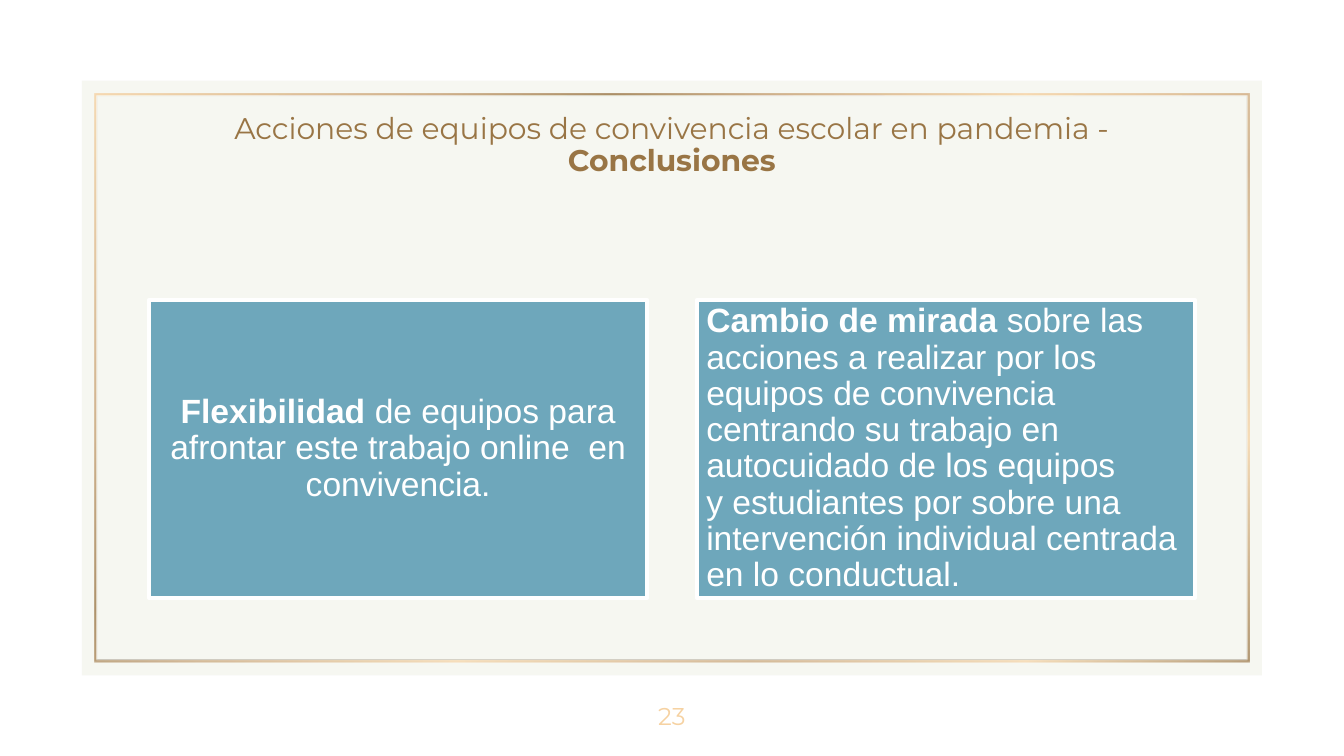
from lxml.etree import SubElement
from pptx import Presentation
from pptx.dml.color import RGBColor
from pptx.enum.shapes import MSO_SHAPE
from pptx.enum.text import MSO_ANCHOR as ANCHOR, PP_ALIGN as ALIGN
from pptx.oxml import parse_xml
from pptx.oxml.ns import nsdecls, qn
from pptx.util import Pt

PX = 4572  # 200 px to the inch
NBSP = chr(160)  # written as ~ in the texts below
COLORS = {"panel": "F5F6F0", "light": "F6D2A2", "mid": "C59F72",
          "dark": "997545", "card": "6EA7BB", "white": "FFFFFF"}
GOLD_STOPS = [(0, "light"), (20, "mid"), (30, "dark"), (39, "mid"),
              (54, "light"), (71, "mid"), (87, "light"), (100, "dark")]
CARDS = [
    (ALIGN.CENTER, "Flexibilidad~",
     "de equipos para afrontar este~trabajo online~ en convivencia."),
    (ALIGN.LEFT, "Cambio de mirada~",
     "sobre las acciones a realizar~por los equipos de convivencia "
     "centrando su~trabajo en autocuidado de los equipos y~estudiantes "
     "por sobre una intervención~individual centrada en lo conductual.~"),
]


def rgb(name):
    return RGBColor.from_string(COLORS[name])


def px(*lengths):
    return [n * PX for n in lengths]


def add_box(shapes, kind, box, fill):
    s = shapes.add_shape(kind, *px(*box))
    s.shadow.inherit = False
    s.fill.solid()
    s.fill.fore_color.rgb = rgb(fill)
    s.line.fill.background()
    return s


def write(s, runs, font, size, color, align, spacing=1.0, inset=0):
    """Fill a shape with one paragraph of (text, bold) runs."""
    tf = s.text_frame
    tf.word_wrap = True
    tf.vertical_anchor = ANCHOR.MIDDLE
    tf.margin_left = tf.margin_top = tf.margin_right = tf.margin_bottom = inset * PX
    p = tf.paragraphs[0]
    p.alignment = align
    p.line_spacing = spacing
    p.font.name, p.font.size = font, Pt(size)
    p.font.color.rgb = rgb(color)
    for text, bold in runs:
        r = p.add_run()
        r.text = text.replace("~", NBSP)
        r.font.bold = bold


def add_panel(slide, box):
    """Pale translucent sheet with a thin gold frame inside it."""
    x, y, w, h = box
    sheet = add_box(slide.shapes, MSO_SHAPE.RECTANGLE, box, "panel")
    color = sheet.fill._xPr.find(qn("a:solidFill"))[0]
    SubElement(color, qn("a:alpha"), val="87000")

    gap = 19
    frame = add_box(slide.shapes, MSO_SHAPE.FRAME,
                    (x + gap, y + gap, w - 2 * gap, h - 2 * gap), "mid")
    frame.adjustments[0] = 0.004
    stops = "".join(
        f'<a:gs pos="{pos * 1000}"><a:srgbClr val="{COLORS[name]}">'
        '<a:alpha val="80000"/></a:srgbClr></a:gs>' for pos, name in GOLD_STOPS)
    sp_pr = frame.fill._xPr
    sp_pr.replace(sp_pr.find(qn("a:solidFill")), parse_xml(
        f'<a:gradFill {nsdecls("a")} rotWithShape="1"><a:gsLst>{stops}</a:gsLst>'
        '<a:lin ang="2700000" scaled="0"/></a:gradFill>'))


def add_title(slide, box):
    title = slide.shapes.title
    slide.shapes._spTree.append(title._element)  # in front of the panel
    title.left, title.top, title.width, title.height = px(*box)
    write(title, [("Acciones de equipos de convivencia escolar en pandemia - ", False),
                  ("Conclusiones", True)],
          "Montserrat", 16, "dark", ALIGN.CENTER, 0.9)


def add_cards(slide, box, gap):
    x, y, w, h = box
    card_w = (w - gap * (len(CARDS) - 1)) // len(CARDS)
    shapes = slide.shapes.add_group_shape().shapes
    for i, (align, lead, rest) in enumerate(CARDS):
        place = (x + i * (card_w + gap), y, card_w, h)
        card = add_box(shapes, MSO_SHAPE.RECTANGLE, place, "card")
        card.line.color.rgb = rgb("white")
        card.line.width = Pt(2)
        label = shapes.add_textbox(*px(*place))
        write(label, [(lead, True), (rest, False)],
              "Arial", 18, "white", align, 0.9, inset=14)


def add_page_number(slide, box):
    s = slide.shapes.add_textbox(*px(*box))
    write(s, [("23", False)], "Montserrat", 13, "light", ALIGN.CENTER)


def main():
    prs = Presentation()
    prs.slide_width, prs.slide_height = px(2000, 1125)
    slide = prs.slides.add_slide(prs.slide_layouts[5])
    add_panel(slide, (122, 120, 1756, 885))
    add_title(slide, (228, 141, 1544, 152))
    add_page_number(slide, (940, 1005, 120, 120))
    add_cards(slide, (222, 446, 1556, 444), gap=74)
    prs.save("out.pptx")


if __name__ == "__main__":
    main()
